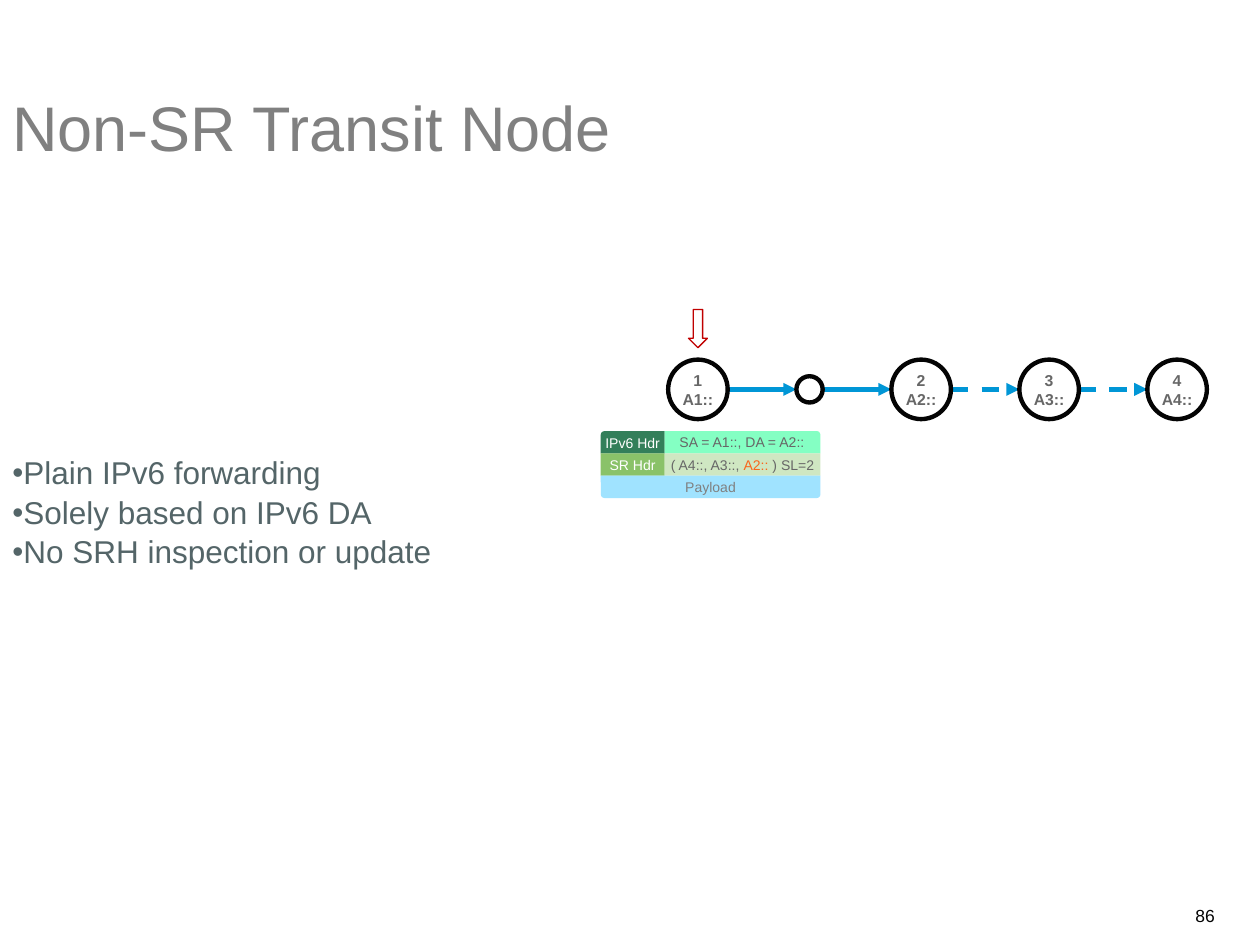
import dataclasses
import itertools

import pptx
import pptx.dml.color
import pptx.enum.dml
import pptx.enum.shapes
import pptx.enum.text
import pptx.oxml.ns
import pptx.util
from lxml import etree

Cm = pptx.util.Cm
Pt = pptx.util.Pt
SHAPE = pptx.enum.shapes.MSO_SHAPE
ALIGN = pptx.enum.text.PP_ALIGN
ANCHOR = pptx.enum.text.MSO_ANCHOR
qn = pptx.oxml.ns.qn


@dataclasses.dataclass(frozen=True)
class Theme:
    font: str = "Arial"
    title_size: float = 36
    list_size: float = 18
    number_size: float = 10
    node_size: float = 9
    packet_size: float = 8
    grey: str = "808080"
    list_ink: str = "546568"
    ink: str = "676767"
    black: str = "040404"
    white: str = "FFFFFF"
    link: str = "0096D6"
    marker: str = "C00000"
    active: str = "FA661C"
    ipv6_label: str = "006031"
    ipv6_value: str = "66FFB4"
    sr_label: str = "6DB344"
    sr_value: str = "C4E2B3"
    payload: str = "89DCFF"
    packet_alpha: int = 80
    line: float = 2.5
    thin_line: float = 0.75


@dataclasses.dataclass(frozen=True)
class Box:
    """A rectangle in centimetres."""
    left: float
    top: float
    width: float
    height: float

    def lengths(self):
        return [Cm(value) for value in dataclasses.astuple(self)]

    def turned(self):
        """The box that covers this one after a quarter turn."""
        shift = (self.width - self.height) / 2
        return Box(self.left + shift, self.top - shift, self.height, self.width)


THEME = Theme()


def rgb(code):
    return pptx.dml.color.RGBColor.from_string(code)


def write_text(shape, paras, *, size, color, bold=False, align=ALIGN.CENTER,
               anchor=ANCHOR.MIDDLE, inset=(0, 0), wrap=True,
               spacing=None, before=None):
    """Fill a shape; each paragraph is a string or a list of (text, color)."""
    frame = shape.text_frame
    frame.word_wrap = wrap
    frame.vertical_anchor = anchor
    frame.margin_left = frame.margin_right = Cm(inset[0])
    frame.margin_top = frame.margin_bottom = Cm(inset[1])
    for index, spans in enumerate(paras):
        para = frame.add_paragraph() if index else frame.paragraphs[0]
        para.alignment = align
        para.line_spacing = spacing
        para.space_before = None if before is None else Pt(before)
        for text, ink in [(spans, color)] if isinstance(spans, str) else spans:
            span = para.add_run()
            span.text = text
            span.font.name = THEME.font
            span.font.size = Pt(size)
            span.font.bold = bold
            span.font.color.rgb = rgb(ink)


def add_shape(shapes, kind, box, *, fill=None, alpha=100, line=None, width=THEME.line):
    shape = shapes.add_shape(kind, *box.lengths())
    shape.shadow.inherit = False
    if fill:
        shape.fill.solid()
        shape.fill.fore_color.rgb = rgb(fill)
        color = shape.fill._xPr.find(".//" + qn("a:srgbClr"))
        etree.SubElement(color, qn("a:alpha"), val=str(alpha * 1000))
    else:
        shape.fill.background()
    if line:
        shape.line.color.rgb = rgb(line)
        shape.line.width = Pt(width)
    else:
        shape.line.fill.background()
    return shape


def add_link(shapes, start, end, y, dashed):
    link = shapes.add_connector(pptx.enum.shapes.MSO_CONNECTOR.STRAIGHT,
                                Cm(start), Cm(y), Cm(end), Cm(y))
    link.line.color.rgb = rgb(THEME.link)
    link.line.width = Pt(THEME.line)
    if dashed:
        link.line.dash_style = pptx.enum.dml.MSO_LINE.DASH
    etree.SubElement(link.line._get_or_add_ln(), qn("a:tailEnd"), type="triangle")
    etree.SubElement(link._element.spPr, qn("a:effectLst"))


def place(holder, box):
    holder.left, holder.top, holder.width, holder.height = box.lengths()


def build_title(page, box):
    title = page.shapes.title
    place(title, box)
    write_text(title, ["Non-SR Transit Node"], size=THEME.title_size, color=THEME.grey,
               align=ALIGN.LEFT, anchor=ANCHOR.BOTTOM, inset=(0.25, 0.13), spacing=0.8)


def build_list(page, box):
    body = page.placeholders[1]
    place(body, box)
    write_text(body, ["Plain IPv6 forwarding", "Solely based on IPv6 DA",
                      "No SRH inspection or update"],
               size=THEME.list_size, color=THEME.list_ink, align=ALIGN.LEFT,
               inset=(0.25, 0.13), spacing=0.95, before=2)
    for para in body.text_frame.paragraphs:
        props = para._p.get_or_add_pPr()
        props.set("marL", "0")
        props.set("indent", "0")
        etree.SubElement(props, qn("a:buChar"), char="•")


def build_path(page, box):
    """Marker arrow above a row of nodes joined by links."""
    node, relay = 1.2, 0.53
    near, far = 2.25, 2.58
    middle = box.top + box.height - node / 2
    labels = ["1", None, "2", "3", "4"]
    centers = itertools.accumulate([near, near, far, far], initial=box.left + node / 2)
    stops = [(center, node if label else relay, label)
             for center, label in zip(centers, labels)]

    for index, (start, end) in enumerate(itertools.pairwise(stops)):
        add_link(page.shapes, start[0] + start[1] / 2, end[0] - end[1] / 2,
                 middle, dashed=index >= 2)
    for center, size, label in stops:
        circle = add_shape(page.shapes, SHAPE.OVAL,
                           Box(center - size / 2, middle - size / 2, size, size),
                           line=THEME.black)
        if label:
            write_text(circle, [label, f"A{label}::"], size=THEME.node_size,
                       color=THEME.ink, bold=True)
    add_shape(page.shapes, SHAPE.DOWN_ARROW,
              Box(stops[0][0] - 0.19, box.top, 0.38, 0.77),
              line=THEME.marker, width=THEME.thin_line)


def build_packet(page, box):
    shapes = page.shapes.add_group_shape().shapes
    row = box.height / 3
    label_width = 1.29

    def cell(kind, index, left, width, fill, spans, ink, rotation=0):
        area = Box(box.left + left, box.top + index * row, width, row)
        sideways = rotation == 270
        shape = add_shape(shapes, kind, area.turned() if sideways else area,
                          fill=fill, alpha=THEME.packet_alpha)
        shape.rotation = rotation
        if sideways:
            shape.text_frame._txBody.bodyPr.set("vert", "vert")
        holder = shapes.add_textbox(*area.lengths()) if rotation == 180 else shape
        write_text(holder, [spans], size=THEME.packet_size, color=ink)

    value = (label_width, box.width - label_width)
    cell(SHAPE.ROUND_1_RECTANGLE, 0, 0, label_width, THEME.ipv6_label,
         "IPv6 Hdr", THEME.white, rotation=270)
    cell(SHAPE.ROUND_1_RECTANGLE, 0, *value, THEME.ipv6_value,
         "SA = A1::, DA = A2::", THEME.ink)
    cell(SHAPE.RECTANGLE, 1, 0, label_width, THEME.sr_label, "SR Hdr", THEME.white)
    cell(SHAPE.RECTANGLE, 1, *value, THEME.sr_value,
         [("( A4::, A3::, ", THEME.ink), ("A2:: ", THEME.active), (") SL=2", THEME.ink)],
         THEME.ink)
    cell(SHAPE.ROUND_2_SAME_RECTANGLE, 2, 0, box.width, THEME.payload,
         "Payload", THEME.grey, rotation=180)


def build_page_number(page, box):
    number = page.shapes.add_textbox(*box.lengths())
    write_text(number, ["86"], size=THEME.number_size, color=THEME.black,
               align=ALIGN.RIGHT, anchor=ANCHOR.BOTTOM, inset=(0.23, 0.11), wrap=False)


def main():
    deck = pptx.Presentation()
    deck.slide_width, deck.slide_height = Cm(25.4), Cm(19.05)
    page = deck.slides.add_slide(deck.slide_layouts[1])
    build_title(page, Box(0, 1.9, 13.5, 1.53))
    build_list(page, Box(0, 5.18, 12.4, 10.34))
    build_packet(page, Box(12.11, 8.69, 4.43, 1.35))
    build_path(page, Box(13.47, 6.24, 10.87, 2.21))
    build_page_number(page, Box(23.83, 18.1, 0.89, 0.67))
    deck.save("out.pptx")


if __name__ == "__main__":
    main()
